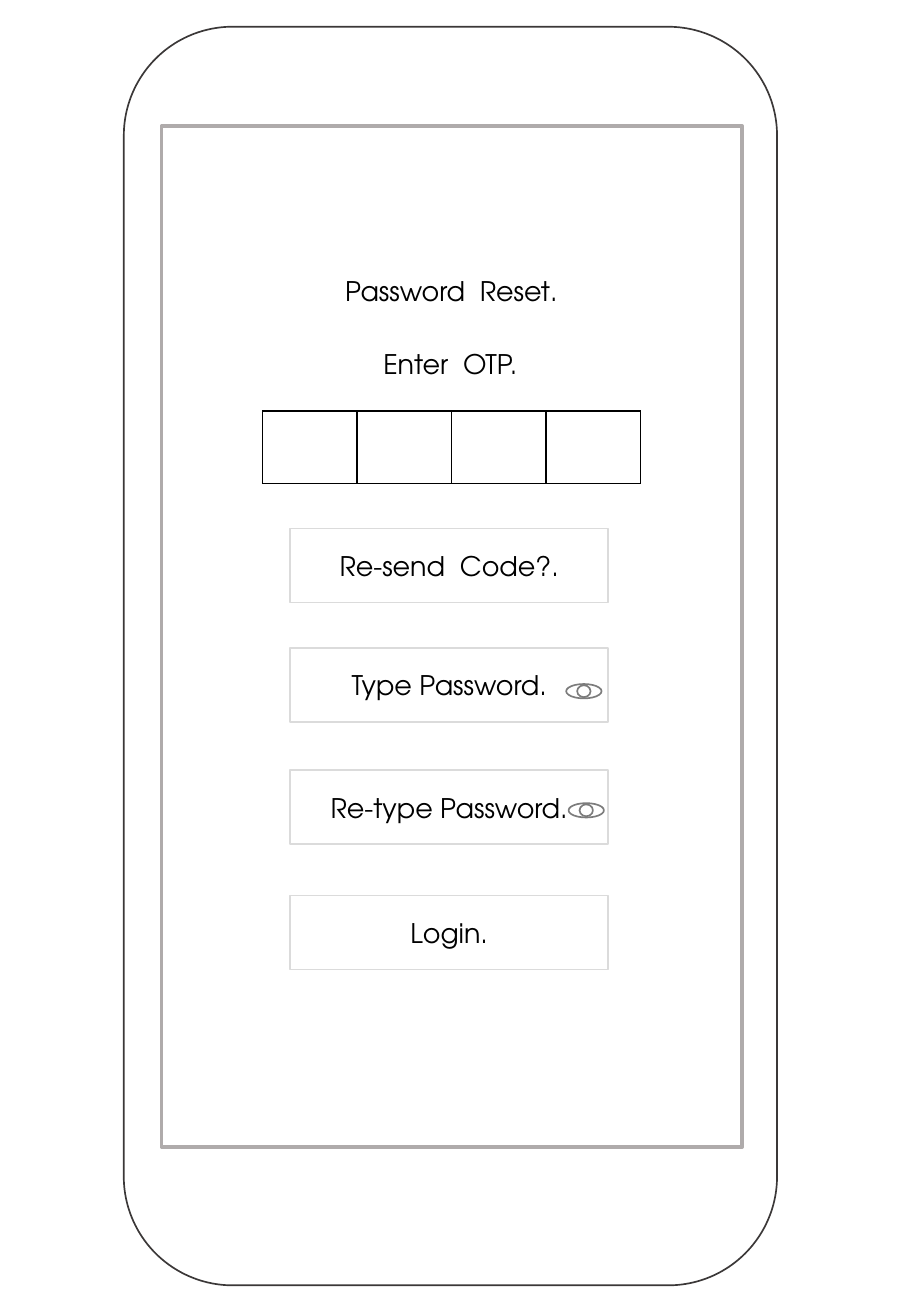
from lxml.etree import SubElement
from pptx import Presentation
from pptx.dml.color import RGBColor
from pptx.enum.shapes import MSO_SHAPE
from pptx.enum.text import MSO_ANCHOR, MSO_AUTO_SIZE, PP_ALIGN
from pptx.oxml.ns import qn
from pptx.util import Cm, Pt

COLOURS = {
    "white": "FFFFFF",
    "black": "000000",
    "phone": "3B3838",
    "screen": "AFABAB",
    "field": "DBDBDB",
    "eye": "7C7C7C",
}
FONT_FORMAT = {"name": "TeX Gyre Adventor", "size": Pt(16), "bold": False}
FRAME_FORMAT = {
    "word_wrap": True,
    "auto_size": MSO_AUTO_SIZE.NONE,
    "vertical_anchor": MSO_ANCHOR.MIDDLE,
    "margin_top": 0,
    "margin_bottom": 0,
}


def apply_format(target, values):
    """Set every attribute named in a dict of format values."""
    for name, value in values.items():
        setattr(target, name, value)


def colour(name):
    """Return a named colour of the palette."""
    return RGBColor.from_string(COLOURS[name])


class Wireframe:
    """Draws the elements of a phone wireframe on one slide."""

    def __init__(self, slide):
        """Keep the slide that is drawn on."""
        self.slide = slide

    def label(self, shape, text):
        """Put one centred line of text into a shape."""
        frame = shape.text_frame
        apply_format(frame, FRAME_FORMAT)
        paragraph = frame.paragraphs[0]
        paragraph.text = text
        paragraph.alignment = PP_ALIGN.CENTER
        apply_format(paragraph.font, FONT_FORMAT)
        paragraph.font.color.rgb = colour("black")

    def fill_white(self, target):
        """Give a shape or a cell a white fill."""
        target.fill.solid()
        target.fill.fore_color.rgb = colour("white")

    def box(self, place, line=None, text=None, kind=MSO_SHAPE.RECTANGLE, width=1):
        """Add a white preset shape with an optional outline and text."""
        shape = self.slide.shapes.add_shape(kind, *map(Cm, place))
        shape.shadow.inherit = False
        self.fill_white(shape)
        if line:
            shape.line.color.rgb = colour(line)
            shape.line.width = Pt(width)
        else:
            shape.line.fill.background()
        if text:
            self.label(shape, text)
        return shape

    def title(self, place, text):
        """Move the title placeholder in front of the screen and fill it."""
        title = self.slide.shapes.title
        title.element.getparent().append(title.element)
        apply_format(title, dict(zip(("left", "top", "width", "height"), map(Cm, place))))
        self.fill_white(title)
        self.label(title, text)

    def eye(self, left, top, width=0.74, height=0.3, pupil_width=0.28, pupil_height=0.25):
        """Add an eye icon with a centred pupil."""
        self.box((left, top, width, height), "eye", kind=MSO_SHAPE.OVAL)
        pupil_left = left + (width - pupil_width) / 2
        pupil_top = top + (height - pupil_height) / 2
        self.box((pupil_left, pupil_top, pupil_width, pupil_height), "eye", kind=MSO_SHAPE.OVAL)

    def code_cells(self, place, count):
        """Add a one-row table of empty bordered cells."""
        table = self.slide.shapes.add_table(1, count, *map(Cm, place)).table
        apply_format(table, {"first_row": False, "horz_banding": False})
        for cell in table.iter_cells():
            properties = cell._tc.get_or_add_tcPr()
            for side in ("a:lnL", "a:lnR", "a:lnT", "a:lnB"):
                border = SubElement(properties, qn(side), w=str(int(Pt(1))))
                solid = SubElement(border, qn("a:solidFill"))
                SubElement(solid, qn("a:srgbClr"), val=COLOURS["black"])
            self.fill_white(cell)


def main():
    """Build the password reset screen."""
    presentation = Presentation()
    apply_format(presentation, {"slide_width": Cm(19.05), "slide_height": Cm(27.51)})
    slide = presentation.slides.add_slide(presentation.slide_layouts[5])
    wireframe = Wireframe(slide)

    wireframe.box((2.59, 0.56, 13.66, 26.31), "phone", kind=MSO_SHAPE.ROUNDED_RECTANGLE)
    wireframe.box((3.38, 2.64, 12.14, 21.34), "screen", width=2.25)
    wireframe.box((6.12, 6.91, 6.6, 1.37), text="Enter  OTP.")
    wireframe.title((5.49, 5.69, 7.9, 0.76), "Password  Reset.")
    wireframe.code_cells((5.49, 8.59, 7.9, 1.52), 4)

    fields = {
        "Re-send  Code?.": 11.05,
        "Type Password.": 13.54,
        "Re-type Password.": 16.1,
        "Login.": 18.72,
    }
    for text, top in fields.items():
        wireframe.box((6.07, top, 6.65, 1.55), "field", text)
    for left, top in ((11.84, 14.3), (11.89, 16.79)):
        wireframe.eye(left, top)

    presentation.save("out.pptx")


if __name__ == "__main__":
    main()
